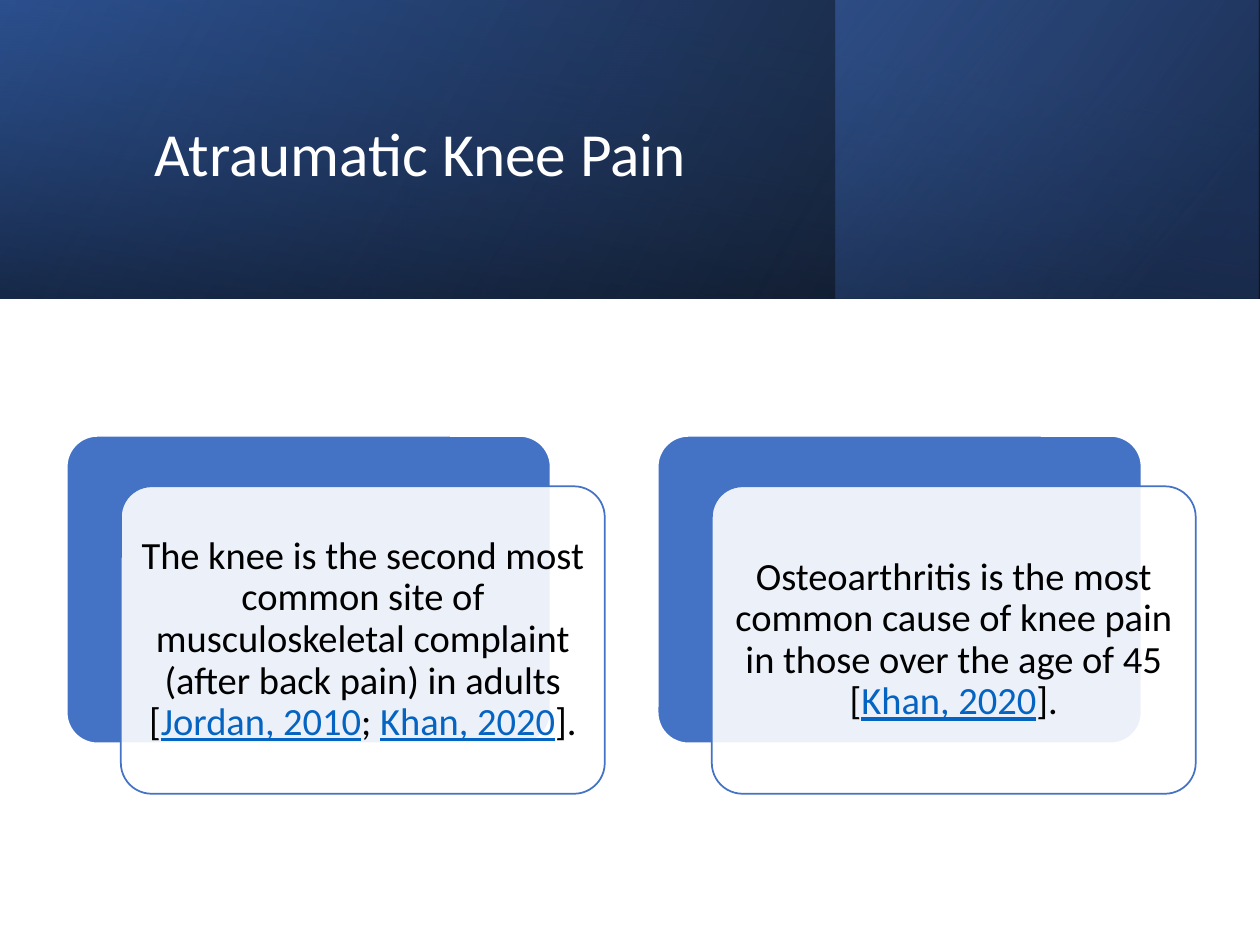
from lxml import etree
from pptx import Presentation
from pptx import util as u
from pptx.dml.color import RGBColor
from pptx.enum import shapes, text
from pptx.oxml import ns

COLORS = {
    "white": "FFFFFF", "black": "000000", "blue": "4472C4",
    "deep": "2F5597", "navy": "203864", "link": "0563C1",
}
FONT = "Calibri"


def rgb(name):
    return RGBColor.from_string(COLORS[name])


def set_alphas(sp, percents):
    """Give the fill colours of a shape, in order, their opacity."""
    for clr, percent in zip(sp._element.spPr.iter(ns.qn("a:srgbClr")), percents):
        if percent < 100:
            etree.SubElement(clr, ns.qn("a:alpha")).set("val", str(percent * 1000))


def add_box(parent, box, kind=shapes.MSO_SHAPE.RECTANGLE):
    sp = parent.add_shape(kind, *map(u.Inches, box))
    sp.shadow.inherit = False
    return sp


def add_gradient(parent, box, stops, angle, rotation=0):
    """Add a mirrored rectangle; stops are (position, colour, opacity)."""
    sp = add_box(parent, box)
    sp.rotation = rotation
    sp._element.spPr.find(ns.qn("a:xfrm")).set("flipH", "1")
    sp.line.fill.background()
    sp.fill.gradient()
    sp.fill.gradient_angle = 360 - angle
    for stop, (position, color, _) in zip(sp.fill.gradient_stops, stops):
        stop.position = position / 100
        stop.color.rgb = rgb(color)
    set_alphas(sp, [opacity for _, _, opacity in stops])


def add_text(parent, box, runs, size, align, inset_x, inset_y):
    """Add one paragraph of (text, colour) runs; link-coloured runs are underlined."""
    tf = parent.add_textbox(*map(u.Inches, box)).text_frame
    tf.word_wrap = True
    tf.vertical_anchor = text.MSO_ANCHOR.MIDDLE
    tf.margin_left = tf.margin_right = u.Inches(inset_x)
    tf.margin_top = tf.margin_bottom = u.Inches(inset_y)
    p = tf.paragraphs[0]
    p.alignment = align
    p.line_spacing = 0.9
    for words, color in runs:
        r = p.add_run()
        r.text = words
        r.font.name = FONT
        r.font.size = u.Pt(size)
        r.font.color.rgb = rgb(color)
        if color == "link":
            r.font.underline = True


def add_header(s, x, y, w, h, title):
    side = 3.36
    add_gradient(s.shapes, (x, y, w, h),
                 [(0, "black", 96), (100, "deep", 100)], 330)
    add_gradient(s.shapes, (x + w - side - 0.01, y, side, h),
                 [(19, "navy", 68), (100, "blue", 48)], 320)
    # Turned on its side, this band covers the header exactly
    add_gradient(s.shapes, (x + (w - h) / 2, y + (h - w) / 2, h, w),
                 [(23, "deep", 16), (99, "black", 45)], 350, rotation=270)
    add_text(s.shapes, (x + 1.13, y + 0.38, 7.97, 1.72), [(title, "white")],
             35, text.PP_ALIGN.LEFT, 0.1, 0.05)


def add_card(parent, x, y, w, h, runs):
    """Add a blue panel with an offset translucent panel that holds the text."""
    dx, dy, pad = 0.43, 0.4, 0.07
    panels = [(x, y, "blue", "white", 100), (x + dx, y + dy, "white", "blue", 90)]
    for left, top, fill, line, opacity in panels:
        sp = add_box(parent, (left, top, w, h), shapes.MSO_SHAPE.ROUNDED_RECTANGLE)
        sp.adjustments[0] = 0.1
        sp.fill.solid()
        sp.fill.fore_color.rgb = rgb(fill)
        set_alphas(sp, [opacity])
        sp.line.color.rgb = rgb(line)
        sp.line.width = u.Pt(1)
    add_text(parent, (x + dx + pad, y + dy + pad, w - 2 * pad, h - 2 * pad), runs,
             22, text.PP_ALIGN.CENTER, 0.09, 0.09)


def add_cards(s, x, y, cards):
    group = s.shapes.add_group_shape()
    for i, runs in enumerate(cards):
        add_card(group.shapes, x + i * 4.69, y, 3.84, 2.44, runs)


def main():
    prs = Presentation()
    prs.slide_width, prs.slide_height = u.Inches(10), u.Inches(7.5)
    s = prs.slides.add_slide(prs.slide_layouts[6])
    add_header(s, 0, 0, 10, 2.37, "Atraumatic Knee Pain")
    add_cards(s, 0.53, 3.46, [
        [("The knee is the second most common site of musculoskeletal complaint "
          "(after back pain) in adults [", "black"),
         ("Jordan, 2010", "link"), ("; ", "black"),
         ("Khan, 2020", "link"), ("].", "black")],
        [("Osteoarthritis is the most common cause of knee pain in those over "
          "the age of 45 [", "black"),
         ("Khan, 2020", "link"), ("].", "black")],
    ])
    prs.save("out.pptx")


if __name__ == "__main__":
    main()
